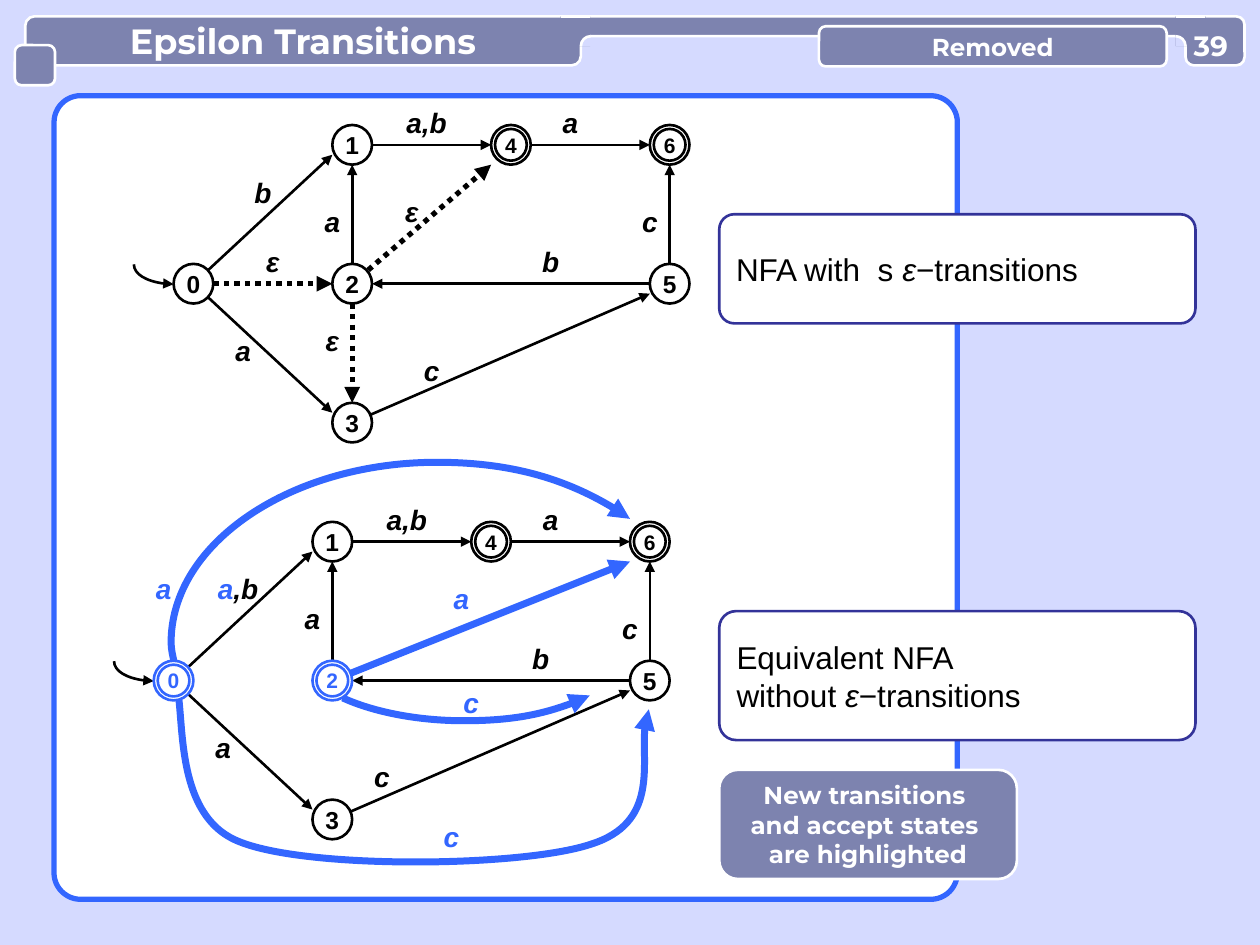
"""Build the slide that removes epsilon transitions from an automaton."""
from lxml import etree
from pptx import Presentation
from pptx.dml.color import RGBColor
from pptx.enum.dml import MSO_LINE
from pptx.enum.shapes import MSO_CONNECTOR, MSO_SHAPE
from pptx.enum.text import MSO_ANCHOR, PP_ALIGN
from pptx.oxml.ns import qn
from pptx.util import Cm, Pt

OVAL, RECTANGLE, ROUNDED = MSO_SHAPE.OVAL, MSO_SHAPE.RECTANGLE, MSO_SHAPE.ROUNDED_RECTANGLE
STRAIGHT, DOTTED = MSO_CONNECTOR.STRAIGHT, MSO_LINE.ROUND_DOT
CENTER, LEFT = PP_ALIGN.CENTER, PP_ALIGN.LEFT
MIDDLE, TOP = MSO_ANCHOR.MIDDLE, MSO_ANCHOR.TOP
COLORS = {name: RGBColor.from_string(value) for name, value in {
    "background": "D5DAFF", "bar": "7D83AF", "white": "FFFFFF",
    "black": "000000", "blue": "3366FF", "navy": "333399"}.items()}


def add_box(container, kind, box, fill=None, line=None, width=1.5, radius=None,
            text="", font="Arial", size=14, color="black"):
    lengths = [Cm(value) for value in box]
    if kind is None:
        shape = container.add_textbox(*lengths)
    else:
        shape = container.add_shape(kind, *lengths)
        shape.shadow.inherit = False
        if radius is not None:
            shape.adjustments[0] = radius
        shape.fill.solid()
        shape.fill.fore_color.rgb = COLORS[fill]
        if line:
            shape.line.color.rgb = COLORS[line]
            shape.line.width = Pt(width)
        else:
            shape.line.fill.background()
    frame = shape.text_frame
    frame.margin_left = frame.margin_right = frame.margin_top = frame.margin_bottom = 0
    frame.word_wrap = False
    frame.vertical_anchor = MIDDLE
    if text:
        frame.text = text
    for paragraph in frame.paragraphs:
        paragraph.alignment = CENTER
        paragraph.font.name, paragraph.font.size = font, Pt(size)
        paragraph.font.bold = True
        paragraph.font.color.rgb = COLORS[color]
    return shape


def add_curve(container, points, line=None, width=1.5, fill=None):
    start, *others = [(Cm(x), Cm(y)) for x, y in points]
    builder = container.build_freeform(*start)
    builder.add_line_segments(others, close=False)
    curve = builder.convert_to_shape()
    curve.shadow.inherit = False
    path = curve.element.find(".//" + qn("a:path"))
    steps = path.findall(qn("a:lnTo"))
    for index in range(0, len(steps) // 3 * 3, 3):
        cubic = etree.Element(qn("a:cubicBezTo"))
        steps[index].addprevious(cubic)
        for step in steps[index:index + 3]:
            cubic.append(step[0])
            path.remove(step)
    if fill:
        curve.fill.solid()
        curve.fill.fore_color.rgb = COLORS[fill]
    else:
        curve.fill.background()
    if line:
        curve.line.color.rgb = COLORS[line]
        curve.line.width = Pt(width)
    else:
        curve.line.fill.background()
    return curve


presentation = Presentation()
presentation.slide_width, presentation.slide_height = Cm(25.4), Cm(19.05)
slide = presentation.slides.add_slide(presentation.slide_layouts[5])
shapes = slide.shapes
slide.background.fill.solid()
slide.background.fill.fore_color.rgb = COLORS["background"]

add_box(shapes, ROUNDED, (1.09, 1.93, 18.21, 16.2), "white", "blue", 3, 0.033)

NODE, INNER = 0.8, 0.64
states = {"0": (3.9, 5.72), "1": (7.1, 2.92), "2": (7.1, 5.72), "3": (7.1, 8.52),
          "4": (10.3, 2.92), "5": (13.5, 5.72), "6": (13.5, 2.92)}
edges = [("0", (0, 0), "1", (-0.4, 0.2)), ("0", (0, 0), "3", (-0.4, -0.2)),
         ("5", (0, 0), "6", (0, 0.4)), ("3", (0, 0), "5", (-0.4, 0.2)),
         ("2", (0, -0.4), "1", (0, 0.4)), ("5", (-0.4, 0), "2", (0.4, 0)),
         ("1", (0.4, 0), "4", (-0.4, 0)), ("4", (0.4, 0), "6", (-0.4, 0))]
epsilon_edges = [("0", (0.4, 0), "2", (-0.4, 0)), ("2", (0, 0), "4", (-0.4, 0.4)),
                 ("2", (0, 0.4), "3", (0, -0.4))]
new_edges = [("2", (0, 0), "6", (-0.4, 0.4))]
labels = [("a,b", 7.9, 2.13), ("a", 11.1, 2.13), ("a", 4.5, 6.73), ("a", 6.3, 4.12)]
diagrams = [
    {"origin": (0, 0), "accepting": "46", "new accepting": "",
     "special": epsilon_edges, "special color": "black", "special width": 3, "dash": DOTTED,
     "labels": [("b", 4.9, 3.53), ("b", 10.7, 4.93), ("c", 12.7, 4.12), ("c", 8.3, 7.12),
                ("ε", 5.1, 4.93), ("ε", 6.3, 6.53), ("ε", 7.9, 3.93)],
     "new labels": [], "arcs": []},
    {"origin": (-0.4, 8), "accepting": "0246", "new accepting": "02",
     "special": new_edges, "special color": "blue", "special width": 4, "dash": None,
     "labels": [("b", 10.9, 4.93), ("c", 12.7, 4.32), ("c", 7.7, 7.32)],
     "new labels": [("a", 3.3, 3.53), ("a", 9.3, 3.73), ("c", 9.5, 5.82), ("c", 9.1, 8.53),
                    ("a,b", 4.5, 3.53)],
     "arcs": [
         [(3.53, 13.72), (3.76, 14.27), (3.43, 16.43), (4.83, 16.97), (6.22, 17.53),
          (10.54, 17.48), (11.91, 17.02), (13.28, 16.59), (12.83, 14.86), (13.08, 14.3)],
         [(6.91, 14.07), (7.52, 14.35), (8.41, 14.53), (9.35, 14.53),
          (10.34, 14.53), (11.28, 14.33), (11.89, 14.02)],
         [(3.51, 13.34), (3.48, 13.21), (3.45, 13.08), (3.45, 12.95), (3.45, 10.95),
          (5.87, 9.32), (8.81, 9.32), (10.29, 9.32), (11.68, 9.73), (12.7, 10.46)]]}]

arrows = []
for diagram in diagrams:
    left, top = diagram["origin"]
    styles = [(edges, "black", 1.5, None),
              (diagram["special"], diagram["special color"], diagram["special width"],
               diagram["dash"])]
    for group_edges, color, width, dash in styles:
        for source, leave, target, arrive in group_edges:
            ends = [Cm(origin + center + shift)
                    for state, offset in ((source, leave), (target, arrive))
                    for origin, center, shift in zip((left, top), states[state], offset)]
            edge = shapes.add_connector(STRAIGHT, *ends)
            edge.line.color.rgb = COLORS[color]
            edge.line.width = Pt(width)
            if dash:
                edge.line.dash_style = dash
            etree.SubElement(edge.element.spPr, qn("a:effectLst"))
            arrows.append(edge)
    entry = [(2.7, 5.33), (2.7, 5.53), (3.05, 5.73), (3.5, 5.73)]
    arrows.append(add_curve(shapes, [(left + x, top + y) for x, y in entry], "black"))
    for arc in diagram["arcs"]:
        arrows.append(add_curve(shapes, arc, "blue", 4))
    for state, (x, y) in states.items():
        color = "blue" if state in diagram["new accepting"] else "black"
        accepting = state in diagram["accepting"]
        container = shapes.add_group_shape().shapes if accepting else shapes
        for diameter in (NODE, INNER) if accepting else (NODE,):
            box = (left + x - diameter / 2, top + y - diameter / 2, diameter, diameter)
            innermost = diameter == INNER or not accepting
            add_box(container, OVAL, box, "white", color, text=state if innermost else "",
                    size=12 if accepting else 14, color=color)
    for color, group_labels in (("black", labels + diagram["labels"]),
                                ("blue", diagram["new labels"])):
        for text, x, y in group_labels:
            box = (left + x, top + y, 1.4 if "," in text else 0.8, 0.8)
            label = add_box(shapes, None, box, text=text, size=16, color=color)
            label.text_frame.vertical_anchor = TOP
            paragraph = label.text_frame.paragraphs[0]
            paragraph.font.italic = True
            if color == "blue" and text == "a,b":
                paragraph.runs[0].text = "a"
                run = paragraph.add_run()
                run.text = ",b"
                run.font.color.rgb = COLORS["black"]
for arrow in arrows:
    etree.SubElement(arrow.element.spPr.find(qn("a:ln")), qn("a:tailEnd"), type="triangle")

captions = [((14.5, 4.32, 9.6, 2.2), 0.138, "NFA with  s ε−transitions"),
            ((14.5, 12.32, 9.6, 2.6), 0.13, "Equivalent NFA\nwithout ε−transitions")]
for box, radius, text in captions:
    frame = add_box(shapes, ROUNDED, box, "white", "navy", 1.5, radius, text, size=18).text_frame
    frame.word_wrap = True
    frame.margin_left = Cm(0.25)
    for paragraph in frame.paragraphs:
        paragraph.alignment = LEFT
        paragraph.font.bold = False
        before, symbol, after = paragraph.text.partition("ε")
        paragraph.runs[0].text = before
        for part in filter(None, (symbol, after)):
            run = paragraph.add_run()
            run.text = part
            run.font.italic = part == "ε"

title_box = (0.51, 0.33, 11.2, 0.99)
title_bar = add_box(shapes, ROUNDED, title_box, "bar", "white", radius=0.188)
title = shapes.title
title_bar.element.addnext(title.element)
title.left, title.top, title.width, title.height = [Cm(value) for value in title_box]
title.text_frame.text = "Epsilon Transitions"
title.text_frame.vertical_anchor = MIDDLE
paragraph = title.text_frame.paragraphs[0]
paragraph.alignment = CENTER
paragraph.font.name, paragraph.font.size, paragraph.font.bold = "Montserrat", Pt(20), True
paragraph.font.color.rgb = COLORS["white"]

add_box(shapes, ROUNDED, (11.71, 0.33, 12.4, 0.4), "bar", "white", radius=0.5)
add_box(shapes, ROUNDED, (0.3, 0.91, 0.81, 0.81), "bar", "white", radius=0.17)
add_box(shapes, ROUNDED, (23.9, 0.33, 1.19, 0.99), "bar", "white", radius=0.17)
for patch_left, corner, direction in ((11.3, 11.91, -1), (23.7, 23.7, 1)):
    notch = shapes.add_group_shape().shapes
    add_box(notch, RECTANGLE, (patch_left, 0.33, 0.6, 0.6), "bar")
    edge = notch.add_connector(STRAIGHT, Cm(patch_left), Cm(0.33), Cm(patch_left + 0.6), Cm(0.33))
    edge.line.color.rgb = COLORS["white"]
    edge.line.width = Pt(1.5)
    etree.SubElement(edge.element.spPr, qn("a:effectLst"))
    bend = [(corner, 0.73), (corner + direction * 0.11, 0.73),
            (corner + direction * 0.2, 0.82), (corner + direction * 0.2, 0.93)]
    add_curve(notch, bend + [(corner, 0.93)], fill="background")
    add_curve(notch, bend, "white")

add_box(shapes, ROUNDED, (16.51, 0.53, 7.01, 0.81), "bar", "white", 1.5, 0.17,
        "Removed", "Montserrat", 14, "white")
add_box(shapes, None, (23.9, 0.56, 1.02, 0.69), text="39", font="Montserrat", size=16,
        color="white")
add_box(shapes, ROUNDED, (14.5, 15.52, 6, 2.2), "bar", "white", 1.5, 0.17,
        "New transitions \nand accept states \nare highlighted", "Montserrat", 14, "white")

presentation.save("out.pptx")
